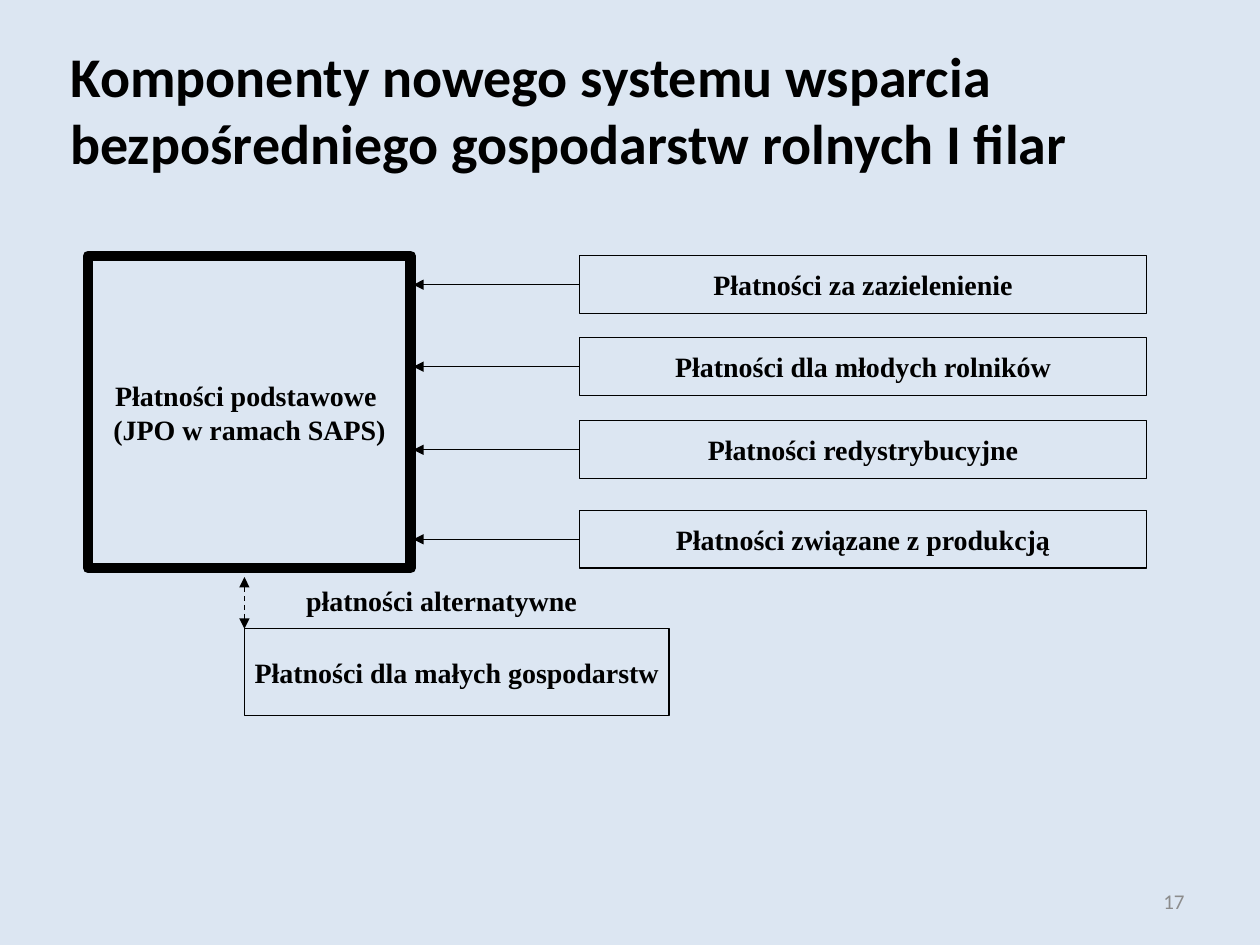
from dataclasses import dataclass

from lxml.etree import SubElement
from pptx import Presentation
from pptx.dml.color import RGBColor
from pptx.enum.dml import MSO_LINE_DASH_STYLE as Dash
from pptx.enum.shapes import MSO_CONNECTOR as Connector, MSO_SHAPE as Preset
from pptx.enum.text import MSO_ANCHOR as Anchor, PP_ALIGN as Align
from pptx.oxml.ns import qn
from pptx.shapes.autoshape import Shape
from pptx.shapes.connector import Connector as Line
from pptx.slide import Slide
from pptx.util import Emu, Inches, Pt

COLOURS = {"background": "DCE6F2", "ink": "000000", "number": "8C8C8C"}
WIDTH, HEIGHT = Inches(10), Inches(7.5)
COLUMNS, ROWS = 100, 75
LABEL_FONT = {"name": "Times New Roman", "size": Pt(16), "bold": True}
TITLE_FONT = {"name": "Calibri", "size": Pt(32), "bold": True}
NUMBER_FONT = {"name": "Calibri", "size": Pt(12)}
NO_MARGINS = {f"margin_{side}": 0 for side in ("left", "top", "right", "bottom")}
PAYMENT_COLUMN, PAYMENT_SPAN, PAYMENT_ROWS = 46, 45, 4.6
ARROW_END = 32.8


@dataclass(frozen=True)
class Area:
    """Place on the grid, in columns and rows."""

    column: float
    row: float
    columns: float
    rows: float

    def lengths(self) -> tuple[Emu, Emu, Emu, Emu]:
        """Return left, top, width and height."""
        return across(self.column), down(self.row), across(self.columns), down(self.rows)


@dataclass(frozen=True)
class Payment:
    """Component that adds to the basic payment."""

    label: str
    row: float


PAYMENTS = (
    Payment("Płatności za zazielenienie", 20.3),
    Payment("Płatności dla młodych rolników", 26.8),
    Payment("Płatności redystrybucyjne", 33.4),
    Payment("Płatności związane z produkcją", 40.5),
)


def across(columns: float) -> Emu:
    """Turn columns into a length."""
    return Emu(round(WIDTH * columns / COLUMNS))


def down(rows: float) -> Emu:
    """Turn rows into a length."""
    return Emu(round(HEIGHT * rows / ROWS))


def colour(name: str) -> RGBColor:
    """Look up a colour."""
    return RGBColor.from_string(COLOURS[name])


def apply(target: object, values: dict) -> None:
    """Set attributes from format values."""
    for name, value in values.items():
        setattr(target, name, value)


def write(box: Shape, lines: tuple[str, ...], font: dict, align: Align,
          frame: dict, ink: str = "ink") -> None:
    """Write one paragraph per line."""
    apply(box.text_frame, {"word_wrap": True, **frame})
    for index, line in enumerate(lines):
        para = box.text_frame.add_paragraph() if index else box.text_frame.paragraphs[0]
        para.alignment = align
        span = para.add_run()
        span.text = line
        apply(span.font, font)
        span.font.color.rgb = colour(ink)


def add_label(page: Slide, area: Area, *lines: str) -> None:
    """Add centred bold text without a frame."""
    box = page.shapes.add_textbox(*area.lengths())
    write(box, lines, LABEL_FONT, Align.CENTER,
          {"vertical_anchor": Anchor.MIDDLE, **NO_MARGINS})


def add_box(page: Slide, area: Area, *lines: str, weight: float = 0.75) -> Shape:
    """Add an outlined rectangle with centred text."""
    box = page.shapes.add_shape(Preset.RECTANGLE, *area.lengths())
    box.shadow.inherit = False
    box.fill.background()
    box.line.color.rgb = colour("ink")
    box.line.width = Pt(weight)
    write(box, lines, LABEL_FONT, Align.CENTER,
          {"vertical_anchor": Anchor.MIDDLE, **NO_MARGINS})
    return box


def add_arrow(page: Slide, start: tuple[float, float], end: tuple[float, float],
              ends: tuple[str, ...] = ("tailEnd",)) -> Line:
    """Add a thin straight arrow."""
    arrow = page.shapes.add_connector(
        Connector.STRAIGHT, across(start[0]), down(start[1]), across(end[0]), down(end[1]))
    arrow.line.color.rgb = colour("ink")
    arrow.line.width = Pt(0.75)
    outline = arrow.line._get_or_add_ln()
    for tag in ends:
        SubElement(outline, qn(f"a:{tag}"), type="triangle")
    SubElement(arrow._element.spPr, qn("a:effectLst"))
    return arrow


def add_payment(page: Slide, payment: Payment) -> None:
    """Add a component and its arrow to the basic payment."""
    box = add_box(page, Area(PAYMENT_COLUMN, payment.row, PAYMENT_SPAN, PAYMENT_ROWS),
                  payment.label)
    middle = payment.row + PAYMENT_ROWS / 2
    arrow = add_arrow(page, (PAYMENT_COLUMN, middle), (ARROW_END, middle))
    arrow.begin_connect(box, 1)


def main() -> None:
    """Build and save the slide."""
    deck = Presentation()
    apply(deck, {"slide_width": WIDTH, "slide_height": HEIGHT})
    page = deck.slides.add_slide(deck.slide_layouts[6])
    page.background.fill.solid()
    page.background.fill.fore_color.rgb = colour("background")

    title = page.shapes.add_textbox(*Area(4.6, 2.8, 87.3, 11.8).lengths())
    write(title, ("Komponenty nowego systemu wsparcia bezpośredniego gospodarstw rolnych I filar",),
          TITLE_FONT, Align.LEFT, {"vertical_anchor": Anchor.TOP})

    add_box(page, Area(7, 20.3, 25.6, 24.8),
            "Płatności podstawowe ", "(JPO w ramach SAPS)", weight=6)
    for payment in PAYMENTS:
        add_payment(page, payment)

    add_box(page, Area(19.4, 49.9, 33.7, 6.9), "Płatności dla małych gospodarstw")
    add_label(page, Area(21.9, 46.3, 26.3, 2.7), "płatności alternatywne")
    alternative = add_arrow(page, (19.4, 45.8), (19.4, 49.9), ("headEnd", "tailEnd"))
    alternative.line.dash_style = Dash.DASH

    number = page.shapes.add_textbox(*Area(71.7, 69.5, 23.3, 4).lengths())
    write(number, ("17",), NUMBER_FONT, Align.RIGHT,
          {"vertical_anchor": Anchor.MIDDLE}, "number")
    deck.save("out.pptx")


if __name__ == "__main__":
    main()
